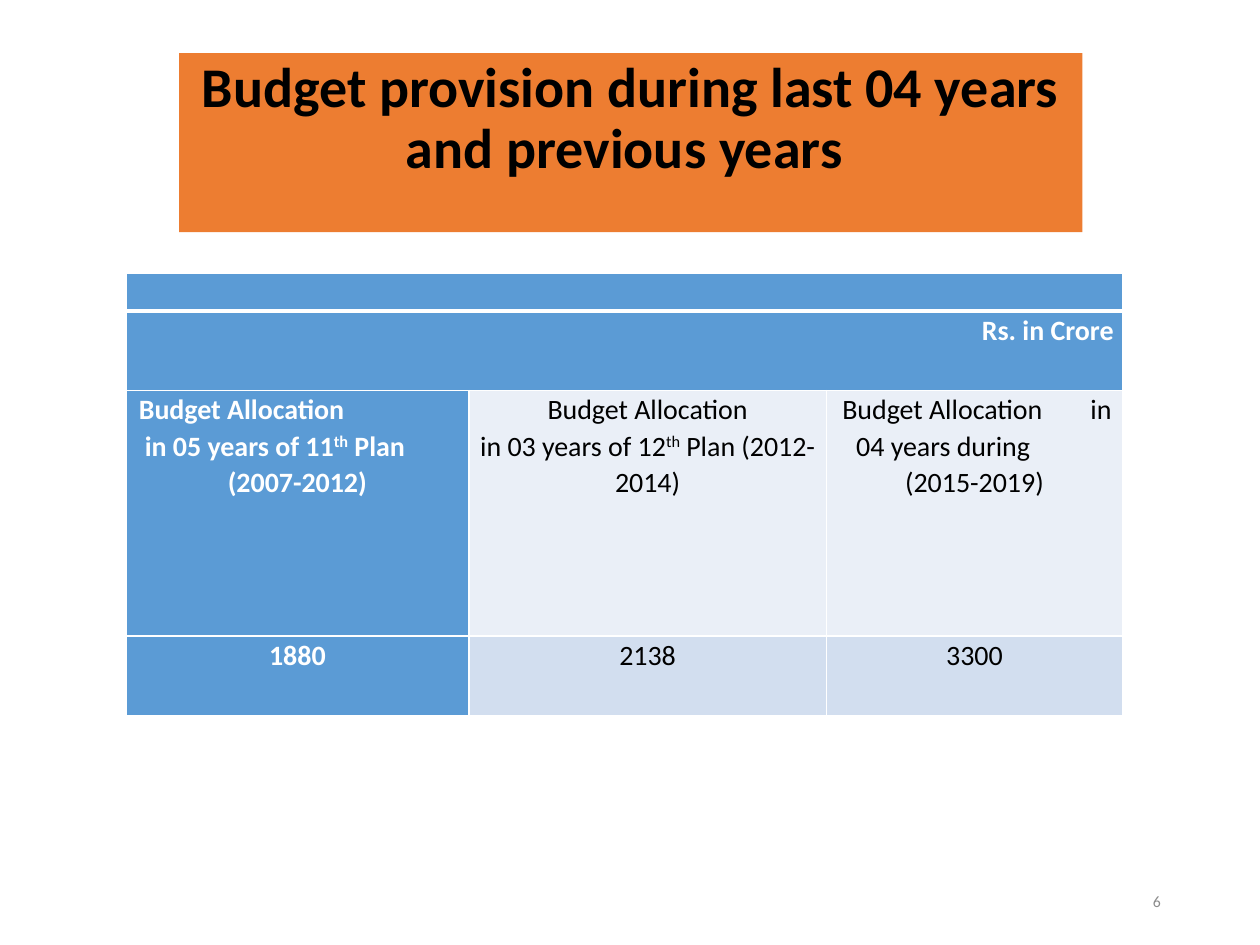
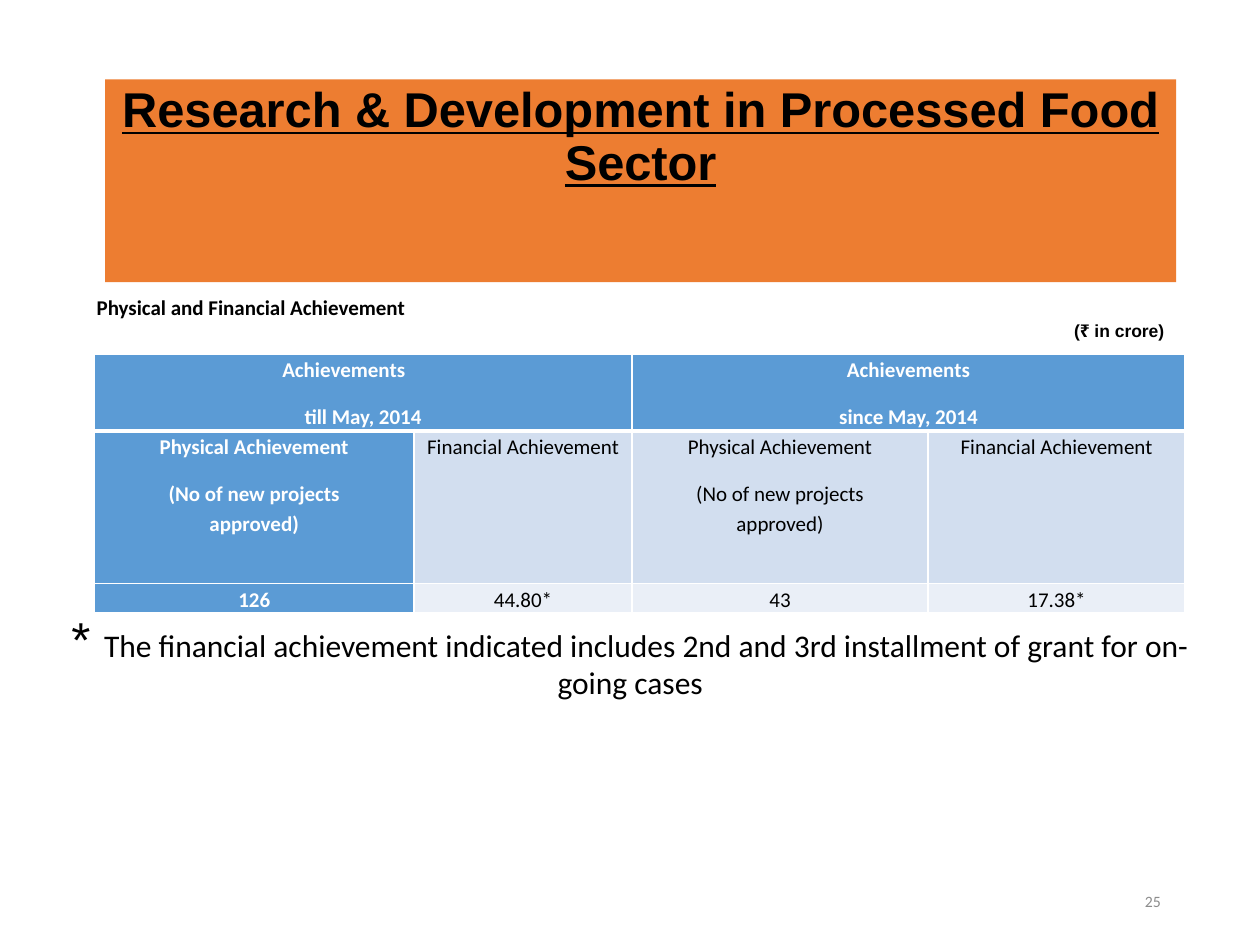
import pptx
import pptx.util
import pptx.dml.color
import pptx.enum.shapes
import pptx.enum.text
import pptx.oxml.ns
import lxml.etree

Cm = pptx.util.Cm
Pt = pptx.util.Pt
ALIGN = pptx.enum.text.PP_ALIGN
ANCHOR = pptx.enum.text.MSO_ANCHOR
COLOURS = {
    "band": "ED7D31", "header": "5B9BD5", "mid": "D2DEEF", "light": "EAEFF7",
    "black": "000000", "white": "FFFFFF", "number": "8C8C8C",
}


def rgb(name):
    return pptx.dml.color.RGBColor.from_string(COLOURS[name])


def write_lines(text_frame, lines, size, colour="black", bold=False, font="Calibri",
                spacing=1.0, after=0):
    """Each line is text or (text, alignment, indent); "|" toggles superscript."""
    text_frame.word_wrap = True
    for index, line in enumerate(lines):
        text, alignment, indent = (line, ALIGN.CENTER, 0) if isinstance(line, str) else line
        paragraph = text_frame.add_paragraph() if index else text_frame.paragraphs[0]
        parts = text.split("|")
        paragraph.text = parts[0]
        for part in parts[1:]:
            paragraph.add_run().text = part
        paragraph.alignment = alignment
        paragraph.line_spacing = spacing
        paragraph.space_after = Pt(after)
        if indent:
            paragraph._p.get_or_add_pPr().set("marL", str(Cm(indent)))
        for run in paragraph.runs:
            run.font.name = font
            run.font.size = Pt(size)
            run.font.bold = bold
            run.font.color.rgb = rgb(colour)
        if len(parts) > 1:
            paragraph.runs[1]._r.get_or_add_rPr().set("baseline", "30000")


# What each slide holds
slides = [
    {
        "title": "Budget provision during last 04 years and previous years ",
        "title_box": (3.61, 1.07, 18.21, 3.61),
        "title_size": 32, "title_font": "Calibri", "title_before": 7.5, "underline": False,
        "number": "6",
        "table_at": (2.54, 5.51),
        "columns": (6.91, 7.21, 5.97),
        "rows": (0.76, 1.6, 4.95, 1.6),
        "merges": [(0, 0, 2), (1, 0, 2)],
        "header_rows": 2, "bands": ("light", "mid"),
        "size": 16, "spacing": 1.07, "after": 0,
        "cells": [
            [[], [], []],
            [[("Rs. in Crore", ALIGN.RIGHT, 0)], [], []],
            [
                [("Budget Allocation", ALIGN.LEFT, 0.08),
                 ("in 05 years of 11|th| Plan", ALIGN.LEFT, 0.2), "(2007-2012)"],
                ["Budget Allocation", "in 03 years of 12|th| Plan (2012-2014)"],
                [("Budget Allocation\tin", ALIGN.LEFT, 0.14),
                 ("04 years during", ALIGN.LEFT, 0.42), "(2015-2019)"],
            ],
            [["1880"], ["2138"], ["3300"]],
        ],
    },
    {
        "title": "Research & Development in Processed Food Sector",
        "title_box": (2.12, 1.6, 21.59, 4.09),
        "title_size": 27.9, "title_font": "Arial", "title_before": 0, "underline": True,
        "number": "25",
        "table_at": (1.9, 7.14),
        "columns": (6.45, 4.39, 5.97, 5.18),
        "rows": (1.55, 3.07, 0.56),
        "merges": [(0, 0, 1), (0, 2, 3)],
        "header_rows": 1, "bands": ("mid", "light"),
        "size": 12, "spacing": 1.15, "after": 10,
        "cells": [
            [[("Achievements", ALIGN.LEFT, 3.61), "till May, 2014"], [],
             ["Achievements", "since May, 2014"], []],
            [["Physical Achievement", "(No of new projects\napproved)"],
             ["Financial Achievement"]] * 2,
            [["126"], ["44.80*"], ["43"], ["17.38*"]],
        ],
    },
]

presentation = pptx.Presentation()
presentation.slide_width = Cm(25.4)
presentation.slide_height = Cm(19.05)

for content in slides:
    slide = presentation.slides.add_slide(presentation.slide_layouts[6])

    # Title band
    band = slide.shapes.add_shape(pptx.enum.shapes.MSO_SHAPE.RECTANGLE,
                                  *map(Cm, content["title_box"]))
    band.shadow.inherit = False
    band.fill.solid()
    band.fill.fore_color.rgb = rgb("band")
    band.line.fill.background()
    band.text_frame.vertical_anchor = ANCHOR.TOP
    write_lines(band.text_frame, [content["title"]], content["title_size"], bold=True,
                font=content["title_font"], spacing=0.9)
    title = band.text_frame.paragraphs[0]
    title.space_before = Pt(content["title_before"])
    title.runs[0].font.underline = content["underline"]

    # Slide number
    number = slide.shapes.add_textbox(Cm(17.93), Cm(17.65), Cm(5.72), Cm(1.02))
    number.text_frame.vertical_anchor = ANCHOR.MIDDLE
    write_lines(number.text_frame, [(content["number"], ALIGN.RIGHT, 0)], 9, "number")

    # Table grid
    columns, rows = content["columns"], content["rows"]
    left, top = content["table_at"]
    table = slide.shapes.add_table(len(rows), len(columns), Cm(left), Cm(top),
                                   Cm(sum(columns)), Cm(sum(rows))).table
    table.first_row = table.horz_banding = False
    for column, width in zip(table.columns, columns):
        column.width = Cm(width)
    for row, height in zip(table.rows, rows):
        row.height = Cm(height)
    for row_index, first, last in content["merges"]:
        table.cell(row_index, first).merge(table.cell(row_index, last))

    # Table cells
    for row_index, row_cells in enumerate(content["cells"]):
        for column_index, lines in enumerate(row_cells):
            cell = table.cell(row_index, column_index)
            cell.margin_left = cell.margin_right = Cm(0.18)
            cell.margin_top = cell.margin_bottom = 0
            cell_properties = cell._tc.get_or_add_tcPr()
            for side in "LRTB":
                thick = (row_index, side) in ((0, "B"), (1, "T"))
                border = lxml.etree.SubElement(
                    cell_properties, pptx.oxml.ns.qn(f"a:ln{side}"),
                    w=str(Pt(3 if thick else 1)))
                border_fill = lxml.etree.SubElement(border, pptx.oxml.ns.qn("a:solidFill"))
                lxml.etree.SubElement(border_fill, pptx.oxml.ns.qn("a:srgbClr"),
                                      val=COLOURS["white"])
            body_row = row_index - content["header_rows"]
            strong = body_row < 0 or column_index == 0
            cell.fill.solid()
            cell.fill.fore_color.rgb = rgb("header" if strong else content["bands"][body_row])
            write_lines(cell.text_frame, lines, content["size"],
                        "white" if strong else "black", strong,
                        spacing=content["spacing"], after=content["after"])
            # Tab stop where a line has a gap
            for paragraph in cell.text_frame.paragraphs:
                if "\t" in paragraph.text:
                    tabs = lxml.etree.SubElement(paragraph._p.get_or_add_pPr(),
                                                 pptx.oxml.ns.qn("a:tabLst"))
                    lxml.etree.SubElement(tabs, pptx.oxml.ns.qn("a:tab"),
                                          pos=str(Cm(5)), algn="l")

# Caption above the achievement table
caption = slide.shapes.add_textbox(Cm(1.7), Cm(5.82), Cm(22.02), Cm(1.63))
write_lines(caption.text_frame, [("Physical and Financial Achievement", ALIGN.LEFT, 0),
                                 ("(₹ in crore)", ALIGN.RIGHT, 0)], 12, bold=True)
unit = caption.text_frame.paragraphs[1].runs[0]
unit.font.name = "Arial"
unit.font.size = Pt(10)

# Footnote below the achievement table
footnote = slide.shapes.add_textbox(Cm(1.06), Cm(12.27), Cm(23.29), Cm(3.18))
write_lines(footnote.text_frame, ["* "], 28, font="Arial", spacing=0.9)
paragraph = footnote.text_frame.paragraphs[0]
paragraph.space_before = Pt(7.5)
note = paragraph.add_run()
note.text = ("The financial achievement indicated includes 2nd and 3rd installment "
             "of grant for on-going cases")
note.font.name = "Calibri"
note.font.size = Pt(18)
note.font.color.rgb = rgb("black")

presentation.save("out.pptx")
